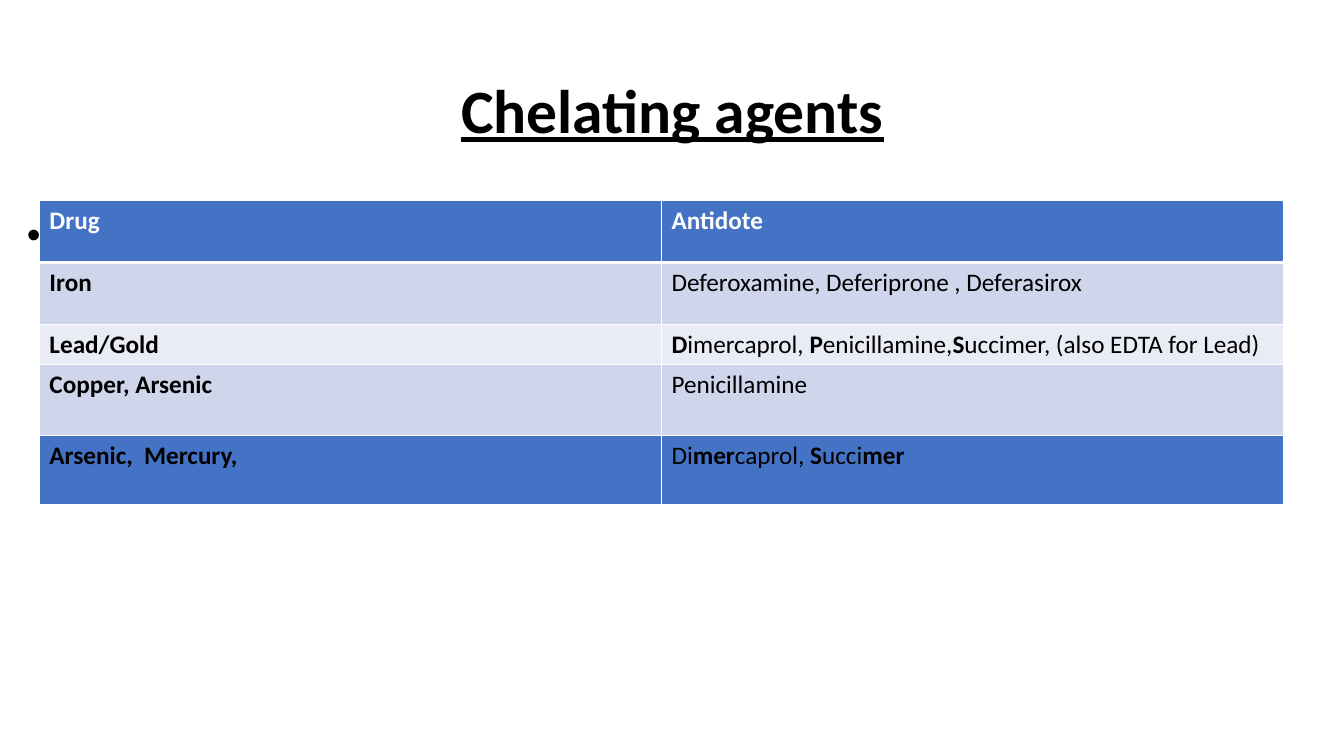
from lxml import etree
from pptx import Presentation
from pptx.dml.color import RGBColor
from pptx.enum.text import MSO_ANCHOR, PP_ALIGN
from pptx.oxml.ns import qn
from pptx.util import Emu, Inches, Pt

CENTER, LEFT = PP_ALIGN.CENTER, PP_ALIGN.LEFT
MIDDLE = MSO_ANCHOR.MIDDLE
TITLE_ONLY = 5
BLACK, WHITE, BLUE = "000000", "FFFFFF", "4472C4"
BAND_DARK, BAND_LIGHT = "CFD5EA", "E9EBF5"


def color(value):
    return RGBColor.from_string(value)


def write(frame, text, size=18, ink=BLACK, underline=None, align=LEFT, spacing=None):
    paragraph = frame.paragraphs[0]
    paragraph.alignment = align
    paragraph.line_spacing = spacing
    for index, part in enumerate(text.split("*")):
        if part:
            run = paragraph.add_run()
            run.text = part
            run.font.name = "Calibri"
            run.font.size = Pt(size)
            run.font.bold = index % 2 == 1
            run.font.underline = underline
            run.font.color.rgb = color(ink)
    return paragraph


class AntidoteSlide:
    def __init__(self):
        self.deck = Presentation()
        self.deck.slide_width = Inches(13.33)
        self.deck.slide_height = Inches(7.5)
        self.slide = self.deck.slides.add_slide(self.deck.slide_layouts[TITLE_ONLY])

    def across(self, percent):
        return Emu(round(self.deck.slide_width * percent / 100))

    def down(self, percent):
        return Emu(round(self.deck.slide_height * percent / 100))

    def area(self, left, top, width, height):
        return self.across(left), self.down(top), self.across(width), self.down(height)

    def title(self, text, *place):
        heading = self.slide.shapes.title
        heading.left, heading.top, heading.width, heading.height = self.area(*place)
        heading.text_frame.vertical_anchor = MIDDLE
        write(heading.text_frame, text, size=44, underline=True, align=CENTER, spacing=0.9)

    def bullet(self, text, *place):
        frame = self.slide.shapes.add_textbox(*self.area(*place)).text_frame
        frame.word_wrap = True
        paragraph = write(frame, text, size=28, spacing=0.9)
        paragraph.space_before = Pt(10)
        properties = paragraph._p.get_or_add_pPr()
        properties.set("marL", str(Inches(0.25)))
        properties.set("indent", str(Inches(-0.25)))
        etree.SubElement(properties, qn("a:buFont"), typeface="Arial")
        etree.SubElement(properties, qn("a:buChar"), char="•")

    def border(self, cell, bottom):
        properties = cell._tc.get_or_add_tcPr()
        for side, points in zip("LRTB", (1, 1, 1, bottom)):
            line = etree.SubElement(properties, qn(f"a:ln{side}"), w=str(Pt(points)))
            fill = etree.SubElement(line, qn("a:solidFill"))
            etree.SubElement(fill, qn("a:srgbClr"), val=WHITE)

    def table(self, rows, left, top, width, header=False):
        height = sum(row[2] for row in rows)
        place = self.area(left, top, width, height)
        grid = self.slide.shapes.add_table(len(rows), 2, *place).table
        grid.first_row = header
        grid.horz_banding = False
        for index, (drug, antidote, share, fill, ink, bottom) in enumerate(rows):
            grid.rows[index].height = self.down(share)
            for cell, text in zip(grid.rows[index].cells, (drug, antidote)):
                self.border(cell, bottom)
                cell.fill.solid()
                cell.fill.fore_color.rgb = color(fill)
                write(cell.text_frame, text, ink=ink)


def main():
    page = AntidoteSlide()
    page.title("*Chelating agents*", 6.9, 5.33, 86.27, 19.33)
    page.bullet("* *", 1.27, 28, 97.6, 62)

    antidotes = [
        ("*Drug*", "*Antidote*", 8.2, BLUE, WHITE, 3),
        ("*Iron*", "Deferoxamine, Deferiprone , Deferasirox", 8.2, BAND_DARK, BLACK, 1),
        ("*Lead/Gold*", "*D*imercaprol, *P*enicillamine,*S*uccimer, (also EDTA for Lead)",
         5.33, BAND_LIGHT, BLACK, 1),
        ("*Copper, Arsenic*", "Penicillamine", 9.33, BAND_DARK, BLACK, 1),
    ]
    mercury = [("*Arsenic,  Mercury,*", "Di*mer*caprol, *S*ucci*mer*", 9.33, BLUE, BLACK, 3)]
    left, top, width = 2.93, 26.53, 92.57
    page.table(antidotes, left, top, width, header=True)
    page.table(mercury, left, top + sum(row[2] for row in antidotes), width)
    page.deck.save("out.pptx")


if __name__ == "__main__":
    main()
